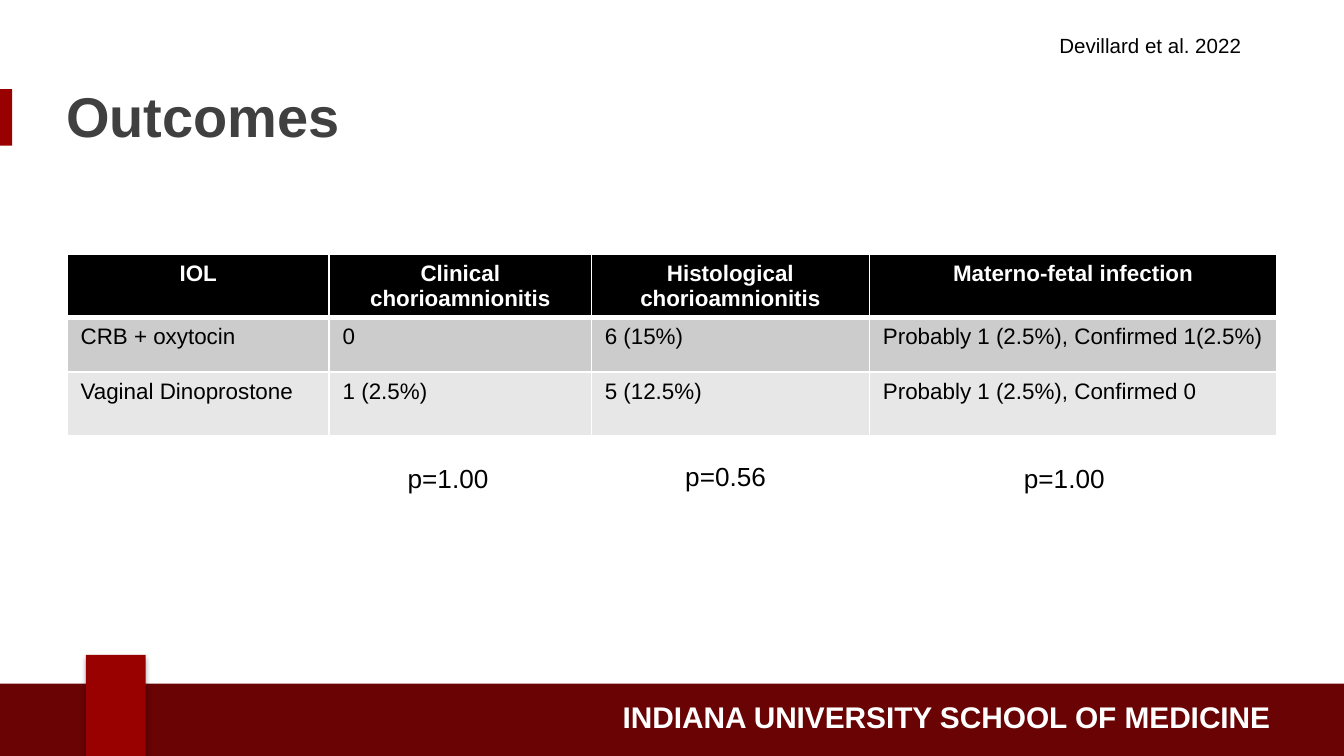
from lxml import etree
from pptx import Presentation
from pptx.dml.color import RGBColor
from pptx.enum.shapes import MSO_SHAPE
from pptx.enum.text import MSO_ANCHOR, PP_ALIGN
from pptx.oxml import parse_xml
from pptx.oxml.ns import nsdecls, qn
from pptx.util import Inches, Pt

color = RGBColor.from_string

prs = Presentation()
prs.slide_width = Inches(10)
prs.slide_height = prs.slide_width * 9 // 16
slide = prs.slides.add_slide(prs.slide_layouts[6])
column = prs.slide_width / 100  # grid of 100 columns, square cells


def add_bar(left, top, width, height, fill):
    bar = slide.shapes.add_shape(
        MSO_SHAPE.RECTANGLE, *(round(n * column) for n in (left, top, width, height)))
    bar.shadow.inherit = False
    bar.fill.solid()
    bar.fill.fore_color.rgb = color(fill)
    bar.line.fill.background()
    return bar


def add_text(left, top, width, height, text, size, ink="000000",
             bold=False, align=PP_ALIGN.LEFT, anchor=MSO_ANCHOR.TOP):
    frame = slide.shapes.add_textbox(
        *(round(n * column) for n in (left, top, width, height))).text_frame
    frame.word_wrap = True
    frame.vertical_anchor = anchor
    paragraph = frame.paragraphs[0]
    paragraph.text = text
    paragraph.alignment = align
    font = paragraph.font
    font.name, font.size, font.bold = "Arial", Pt(size), bold
    font.color.rgb = color(ink)


# Title accent and footer band
add_bar(0, 6.63, 0.9, 4.2, "990000")
add_bar(-0.3, 50.87, 100.9, 5.5, "690304")
add_text(28.15, 51.45, 67.4, 3.7, "INDIANA UNIVERSITY SCHOOL OF MEDICINE", 16,
         "FFFFFF", True, PP_ALIGN.RIGHT, MSO_ANCHOR.MIDDLE)

# Footer tab with a soft shadow
footer_tab = add_bar(6.4, 48.74, 4.45, 7.6, "990000")
footer_tab._element.spPr.find(qn("a:effectLst")).append(parse_xml(
    f'<a:outerShdw {nsdecls("a")} blurRad="{Pt(3.1)}" dist="{Pt(1.8)}" dir="5400000" '
    'rotWithShape="0"><a:srgbClr val="000000"><a:alpha val="35000"/></a:srgbClr>'
    '</a:outerShdw>'))

# Title and citation
add_text(3.94, 5.6, 87.5, 7.6, "Outcomes", 30, "404041", True)
add_text(52.85, 1.95, 40.5, 2.8, "Devillard et al. 2022", 11, align=PP_ALIGN.RIGHT)

# Outcomes table
outcomes = [
    ["IOL", "Clinical chorioamnionitis", "Histological chorioamnionitis",
     "Materno-fetal infection"],
    ["CRB + oxytocin", "0", "6 (15%)", "Probably 1 (2.5%), Confirmed 1(2.5%)"],
    ["Vaginal Dinoprostone", "1 (2.5%)", "5 (12.5%)", "Probably 1 (2.5%), Confirmed 0"],
]
column_widths = [19.5, 19.5, 20.7, 30.3]
row_heights = [4.7, 4.1, 4.7]
row_fills = ["000000", "CCCCCC", "E7E7E7"]
table = slide.shapes.add_table(
    3, 4, *(round(n * column) for n in (5, 18.9, 90, sum(row_heights)))).table
for table_column, width in zip(table.columns, column_widths):
    table_column.width = round(width * column)

for r, (entries, height, fill) in enumerate(zip(outcomes, row_heights, row_fills)):
    table.rows[r].height = round(height * column)
    header = r == 0
    for c, entry in enumerate(entries):
        cell = table.cell(r, c)
        cell.text = entry
        cell.margin_bottom = round(0.2 * column)
        paragraph = cell.text_frame.paragraphs[0]
        paragraph.alignment = PP_ALIGN.CENTER if header else PP_ALIGN.LEFT
        font = paragraph.font
        font.name, font.size, font.bold = "Arial", Pt(12), header
        font.color.rgb = color("FFFFFF" if header else "000000")

        # White borders, heavier between header and body
        properties = cell._tc.get_or_add_tcPr()
        for side in "LRTB":
            heavy = (r, side) in ((0, "B"), (1, "T"))
            border = etree.SubElement(
                properties, qn(f"a:ln{side}"), w=str(Pt(3 if heavy else 1)))
            paint = etree.SubElement(border, qn("a:solidFill"))
            etree.SubElement(paint, qn("a:srgbClr"), val="FFFFFF")
        cell.fill.solid()
        cell.fill.fore_color.rgb = color(fill)

# P values under the outcome columns
for left, top, p_value in [(29.35, 33.9, "p=1.00"), (50, 33.75, "p=0.56"),
                           (75.2, 33.9, "p=1.00")]:
    add_text(left, top, 12.9, 3.4, p_value, 14)

prs.save("out.pptx")
